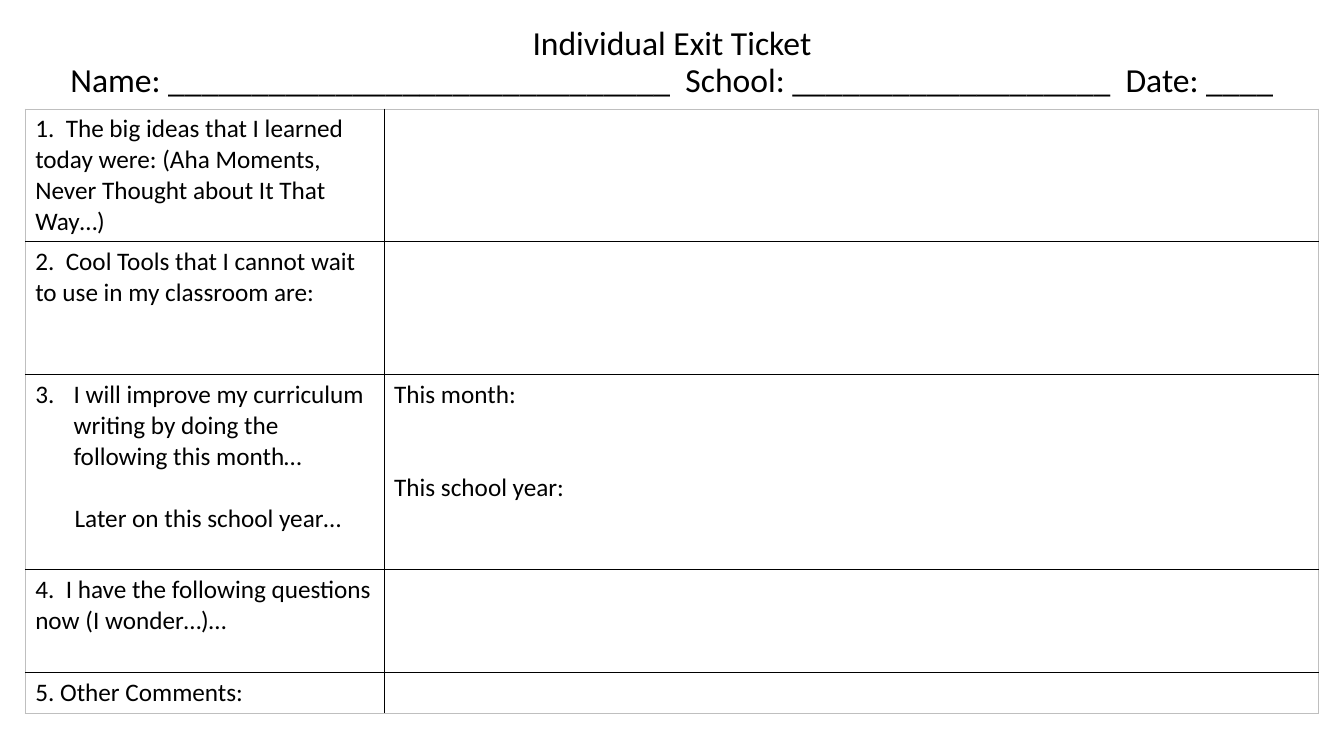
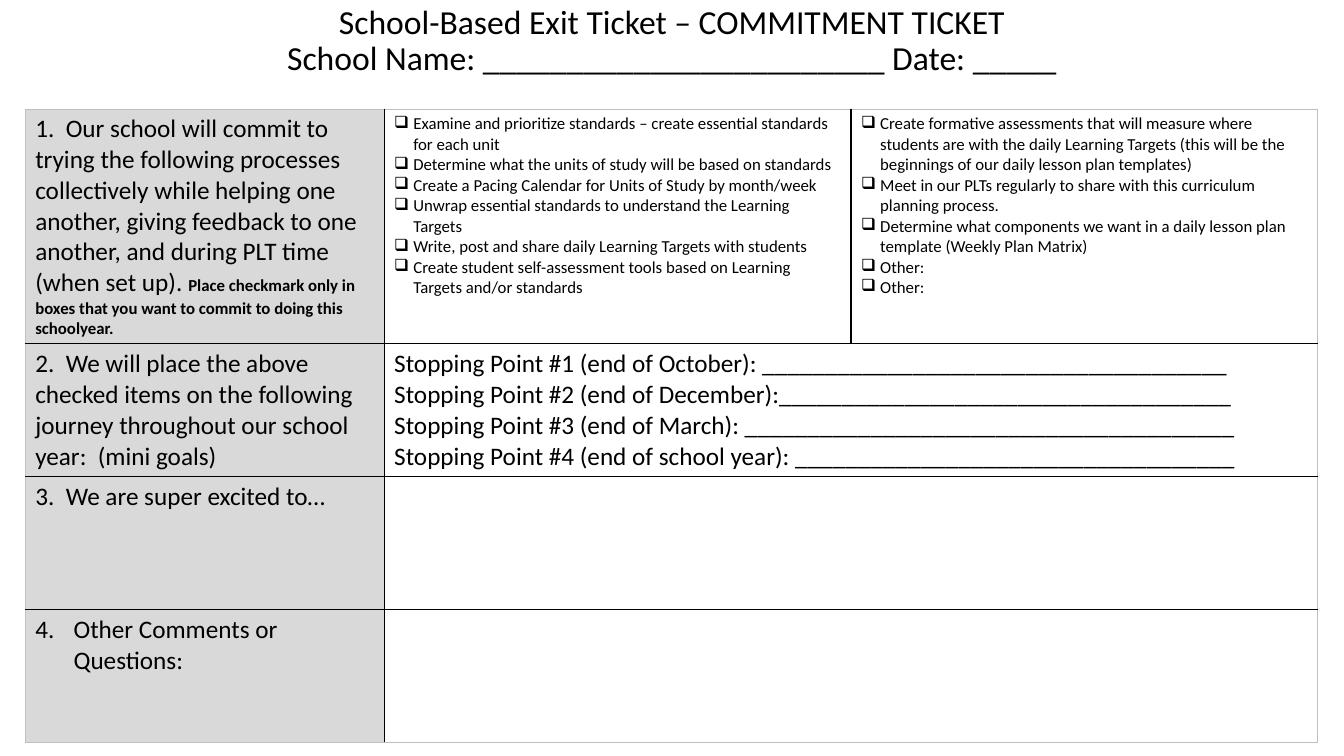
from lxml.etree import SubElement
from pptx import Presentation
from pptx.dml.color import RGBColor
from pptx.enum.text import MSO_ANCHOR, PP_ALIGN
from pptx.oxml import parse_xml
from pptx.oxml.ns import nsdecls, qn
from pptx.util import Inches, Pt

COLORS = {"ink": "000000", "label": "D9D9D9", "edge": "BFBFBF"}
SIZES = {"title": 24, "body": 18, "small": 12}
FONT = "Calibri"
SLIDE_WIDTH, SLIDE_HEIGHT = 13.33, 7.5
TABLE_LEFT, TABLE_TOP = 0.25, 1.08
LINE = 22  # height of one body line in points


class TicketDeck:
    """Holds the shared style and the slide being built."""

    def __init__(self):
        self.deck = Presentation()
        self.deck.slide_width = Inches(SLIDE_WIDTH)
        self.deck.slide_height = Inches(SLIDE_HEIGHT)
        self.page = None

    def add_page(self):
        self.page = self.deck.slides.add_slide(self.deck.slide_layouts[6])

    def span(self, para, text, size="body", bold=False):
        run = para.add_run()
        run.text = text
        run.font.color.rgb = RGBColor.from_string(COLORS["ink"])
        style = {"name": FONT, "size": Pt(SIZES[size]), "bold": bold}
        for name, value in style.items():
            setattr(run.font, name, value)

    def title(self, lines, height):
        box = self.page.shapes.add_textbox(0, 0, Inches(SLIDE_WIDTH), Inches(height))
        frame = box.text_frame
        for name, value in {"word_wrap": True, "vertical_anchor": MSO_ANCHOR.MIDDLE}.items():
            setattr(frame, name, value)
        for index, line in enumerate(lines):
            para = frame.add_paragraph() if index else frame.paragraphs[0]
            for name, value in {"alignment": PP_ALIGN.CENTER, "line_spacing": 0.9}.items():
                setattr(para, name, value)
            self.span(para, line, "title")

    def bullet(self, para, indent, tag, **attributes):
        properties = para._p.get_or_add_pPr()
        properties.set("marL", str(Inches(indent)))
        properties.set("indent", str(-Inches(indent)))
        SubElement(properties, qn(f"a:{tag}"), **attributes)

    def paragraph(self, para, item):
        """Write a plain string or a dict of text and paragraph format."""
        if isinstance(item, str):
            item = {"text": item}
        if "number" in item:
            self.bullet(para, 0.38, "buAutoNum", type="arabicPeriod", startAt=str(item["number"]))
        if item.get("check"):
            self.bullet(para, 0.19, "buChar", char="❑")
        if "indent" in item:
            para._p.get_or_add_pPr().set("marL", str(Inches(item["indent"])))
        if "before" in item:
            para.space_before = Pt(item["before"])
        self.span(para, item["text"], item.get("size", "body"))
        if "note" in item:
            self.span(para, item["note"], "small", True)

    def borders(self, cell, outer):
        properties = cell._tc.get_or_add_tcPr()
        for position, (tag, is_outer) in enumerate(outer.items()):
            color, width = ("edge", 0.5) if is_outer else ("ink", 1)
            properties.insert(position, parse_xml(
                f'<a:{tag} {nsdecls("a")} w="{Pt(width)}"><a:solidFill>'
                f'<a:srgbClr val="{COLORS[color]}"/></a:solidFill></a:{tag}>'))

    def table(self, widths, heights, rows, label_fill=None, merged_rows=()):
        shape = self.page.shapes.add_table(
            len(heights), len(widths), Inches(TABLE_LEFT), Inches(TABLE_TOP),
            Inches(sum(widths)), Inches(sum(heights)))
        table = shape.table
        for name in ("first_row", "horz_banding"):
            setattr(table, name, False)
        for column, width in zip(table.columns, widths):
            column.width = Inches(width)
        for row, height in zip(table.rows, heights):
            row.height = Inches(height)
        last_row, last_column = len(heights) - 1, len(widths) - 1
        for index in merged_rows:
            table.cell(index, 1).merge(table.cell(index, last_column))

        for r in range(len(heights)):
            for c in range(len(widths)):
                cell = table.cell(r, c)
                if c == 0 and label_fill:
                    cell.fill.solid()
                    cell.fill.fore_color.rgb = RGBColor.from_string(COLORS[label_fill])
                else:
                    cell.fill.background()
                outer = {"lnL": c == 0, "lnR": c + cell.span_width > last_column,
                         "lnT": r == 0, "lnB": r == last_row}
                if cell.is_spanned:
                    del outer["lnL"]
                self.borders(cell, outer)
                items = rows[r][c] if c < len(rows[r]) else []
                for index, item in enumerate(items):
                    frame = cell.text_frame
                    para = frame.add_paragraph() if index else frame.paragraphs[0]
                    self.paragraph(para, item)


def checklist(*texts):
    return [{"text": text, "size": "small", "check": True} for text in texts]


def main():
    tickets = TicketDeck()

    # Individual ticket
    tickets.add_page()
    tickets.title([
        "Individual Exit Ticket",
        f"Name: {'_' * 30}  School: {'_' * 19}  Date: {'_' * 4}",
    ], 1.25)
    tickets.table([3.56, 9.27], [1.32, 1.32, 1.93, 1.02, 0.41], [
        [["1.  The big ideas that I learned today were: "
          "(Aha Moments, Never Thought about It That Way…)"]],
        [["2.  Cool Tools that I cannot wait to use in my classroom are:"]],
        [[{"text": "I will improve my curriculum writing by doing the following this month…",
           "number": 3},
          {"text": "Later on this school year…", "indent": 0.39, "before": LINE}],
         ["This month:", {"text": "This school year:", "before": 2 * LINE}]],
        [["4.  I have the following questions now (I wonder…)…"]],
        [["5. Other Comments:"]],
    ])

    # School commitment ticket
    tickets.add_page()
    tickets.title([
        "School-Based Exit Ticket – COMMITMENT TICKET",
        f"School Name: {'_' * 24} Date: {'_' * 5}",
    ], 0.83)
    stopping_points = [("October): ", 37), ("December):", 36),
                       ("March): ", 39), ("school year): ", 35)]
    tickets.table([3.56, 4.63, 4.63], [2.33, 1.32, 1.32, 1.32], [
        [[{"text": "1.  Our school will commit to trying the following processes "
                   "collectively while helping one another, giving feedback to one "
                   "another, and during PLT time (when set up). ",
           "note": "Place checkmark only in boxes that you want to commit to "
                   "doing this schoolyear."}],
         checklist(
             "Examine and prioritize standards – create essential standards for each unit",
             "Determine what the units of study will be based on standards",
             "Create a Pacing Calendar for Units of Study by month/week",
             "Unwrap essential standards to understand the Learning Targets",
             "Write, post and share daily Learning Targets with students",
             "Create student self-assessment tools based on Learning Targets and/or standards"),
         checklist(
             "Create formative assessments that will measure where students are with the "
             "daily Learning Targets (this will be the beginnings of our daily lesson plan "
             "templates)",
             "Meet in our PLTs regularly to share with this curriculum planning process.",
             "Determine what components we want in a daily lesson plan template "
             "(Weekly Plan Matrix)",
             "Other:",
             "Other:")],
        [["2.  We will place the above checked items on the following journey "
          "throughout our school year:  (mini goals)"],
         [f"Stopping Point #{number} (end of {when}{'_' * blanks}"
          for number, (when, blanks) in enumerate(stopping_points, 1)]],
        [["3.  We are super excited to…"]],
        [[{"text": "Other Comments or Questions:", "number": 4}]],
    ], label_fill="label", merged_rows=(1, 2, 3))

    tickets.deck.save("out.pptx")


if __name__ == "__main__":
    main()
